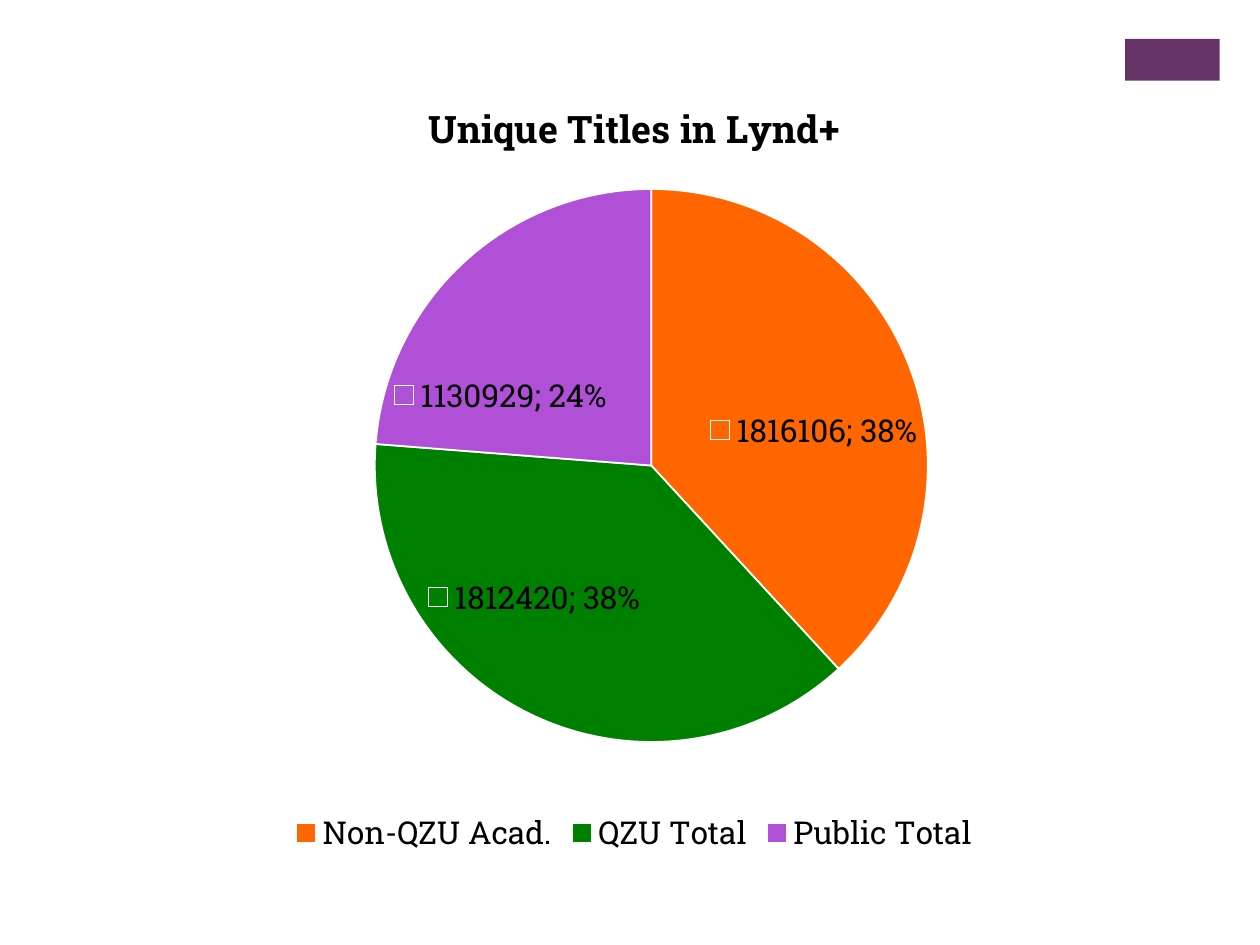
from dataclasses import dataclass

from lxml import etree
from pptx import Presentation
from pptx.chart.chart import Chart
from pptx.chart.data import CategoryChartData
from pptx.dml.color import RGBColor
from pptx.enum.chart import XL_CHART_TYPE, XL_LABEL_POSITION, XL_LEGEND_POSITION
from pptx.enum.shapes import MSO_SHAPE
from pptx.oxml.ns import qn
from pptx.util import Inches, Pt

PIE = XL_CHART_TYPE.PIE
CENTER = XL_LABEL_POSITION.CENTER
BOTTOM = XL_LEGEND_POSITION.BOTTOM
RECTANGLE = MSO_SHAPE.RECTANGLE

FONT = "Roboto Slab"
COLORS = {
    "text": "000000",
    "border": "FFFFFF",
    "accent": "663366",
    "orange": "FF6600",
    "green": "008000",
    "purple": "B050D7",
}


@dataclass
class Slice:
    name: str
    value: int
    color: str
    label_shift: tuple[float, float]


SLICES = [
    Slice("Non-QZU Acad.", 1816106, "orange", (0.03, 0.02)),
    Slice("QZU Total", 1812420, "green", (-0.05, 0.01)),
    Slice("Public Total", 1130929, "purple", (-0.05, 0.04)),
]


def color(name: str) -> RGBColor:
    return RGBColor.from_string(COLORS[name])


def style_font(font, size: float = 18, bold: bool = False) -> None:
    font.name = FONT
    font.size = Pt(size)
    font.bold = bold
    font.color.rgb = color("text")


def write_text(frame, text: str, **style) -> None:
    span = frame.paragraphs[0].add_run()
    span.text = text
    style_font(span.font, **style)


def make_layout(**settings):
    layout = etree.Element(qn("c:layout"))
    manual = etree.SubElement(layout, qn("c:manualLayout"))
    for tag, value in settings.items():
        etree.SubElement(manual, qn(f"c:{tag}")).set("val", str(value))
    return layout


def place_plot(chart: Chart) -> None:
    area = chart.element.find(f".//{qn('c:plotArea')}")
    for old in area.findall(qn("c:layout")):
        area.remove(old)
    area.insert(0, make_layout(layoutTarget="inner", xMode="edge", yMode="edge",
                               x=0.27, y=0.15, w=0.49, h=0.7))


def format_slice(chart: Chart, index: int, item: Slice) -> None:
    series = chart.plots[0].series[0]
    point = series.points[index]
    point.format.fill.solid()
    point.format.fill.fore_color.rgb = color(item.color)
    point.format.line.color.rgb = color("border")
    point.format.line.width = Pt(1)

    label = point.data_label
    style_font(label.font)
    label.position = CENTER
    entry = chart.element.findall(f".//{qn('c:dLbl')}")[index]
    entry.find(f".//{qn('a:bodyPr')}").set("wrap", "none")
    for tag in ("showLegendKey", "showVal", "showPercent"):
        entry.find(qn(f"c:{tag}")).set("val", "1")
    etree.SubElement(entry, qn("c:separator")).text = "; "
    x, y = item.label_shift
    entry.insert(1, make_layout(x=x, y=y))


def add_pie(page) -> None:
    data = CategoryChartData()
    data.categories = [item.name for item in SLICES]
    data.add_series("Series 1", [item.value for item in SLICES])
    chart = page.shapes.add_chart(PIE, Inches(0.54), Inches(0.56),
                                  Inches(8.99), Inches(6.27), data).chart
    style_font(chart.font)
    chart.plots[0].vary_by_categories = True
    chart.has_title = True
    write_text(chart.chart_title.text_frame, "Unique Titles in Lynd+", size=21.6, bold=True)
    chart.has_legend = True
    chart.legend.position = BOTTOM
    chart.legend.include_in_layout = False
    style_font(chart.legend.font)
    place_plot(chart)
    for index, item in enumerate(SLICES):
        format_slice(chart, index, item)


def add_accent(page) -> None:
    box = page.shapes.add_shape(RECTANGLE, Inches(8.93), Inches(0.31),
                                Inches(0.75), Inches(0.33))
    box.shadow.inherit = False
    box.fill.solid()
    box.fill.fore_color.rgb = color("accent")
    box.line.fill.background()


def main() -> None:
    deck = Presentation()
    deck.slide_width = Inches(10)
    deck.slide_height = Inches(7.5)
    page = deck.slides.add_slide(deck.slide_layouts[6])
    add_accent(page)
    add_pie(page)
    deck.save("out.pptx")


if __name__ == "__main__":
    main()
